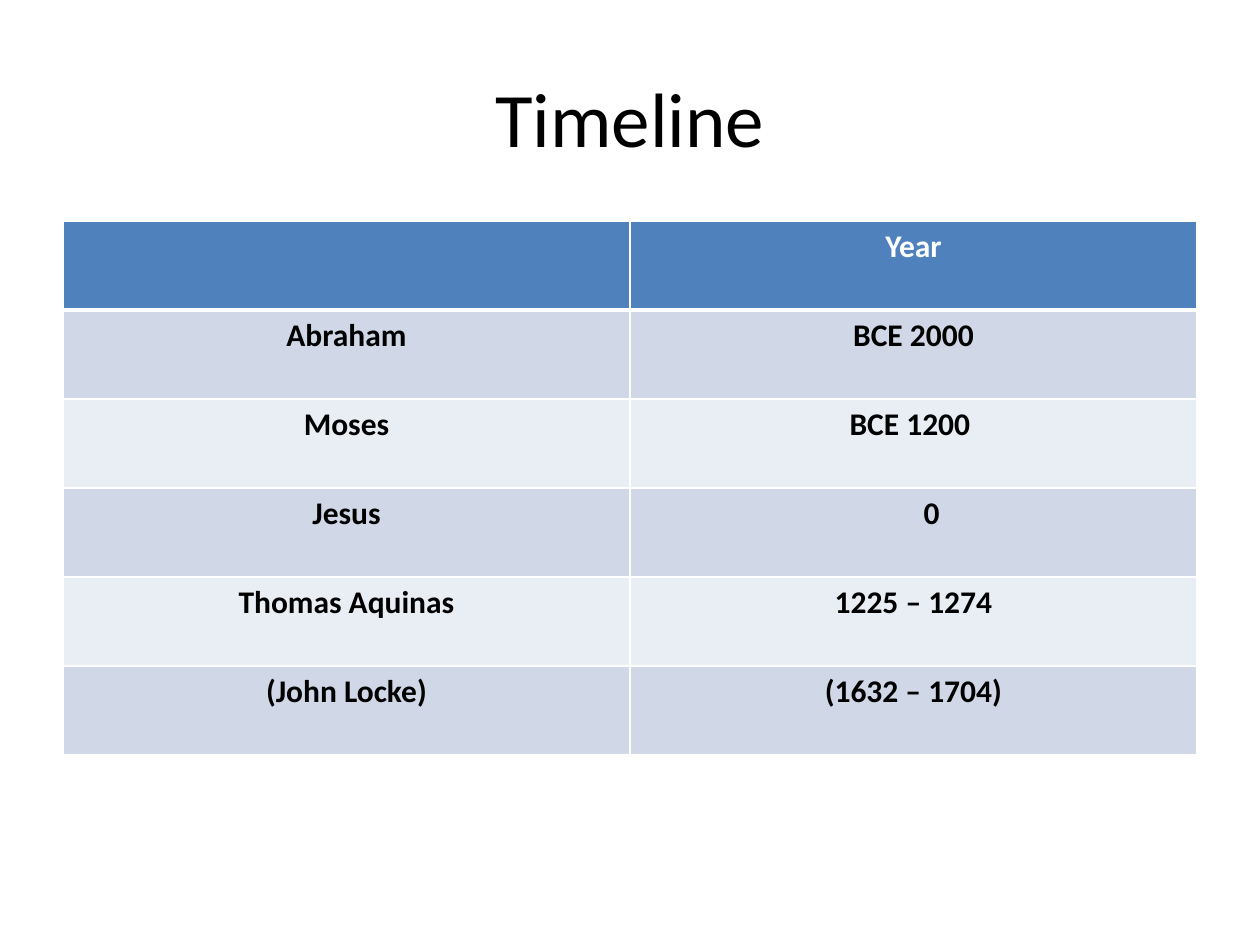
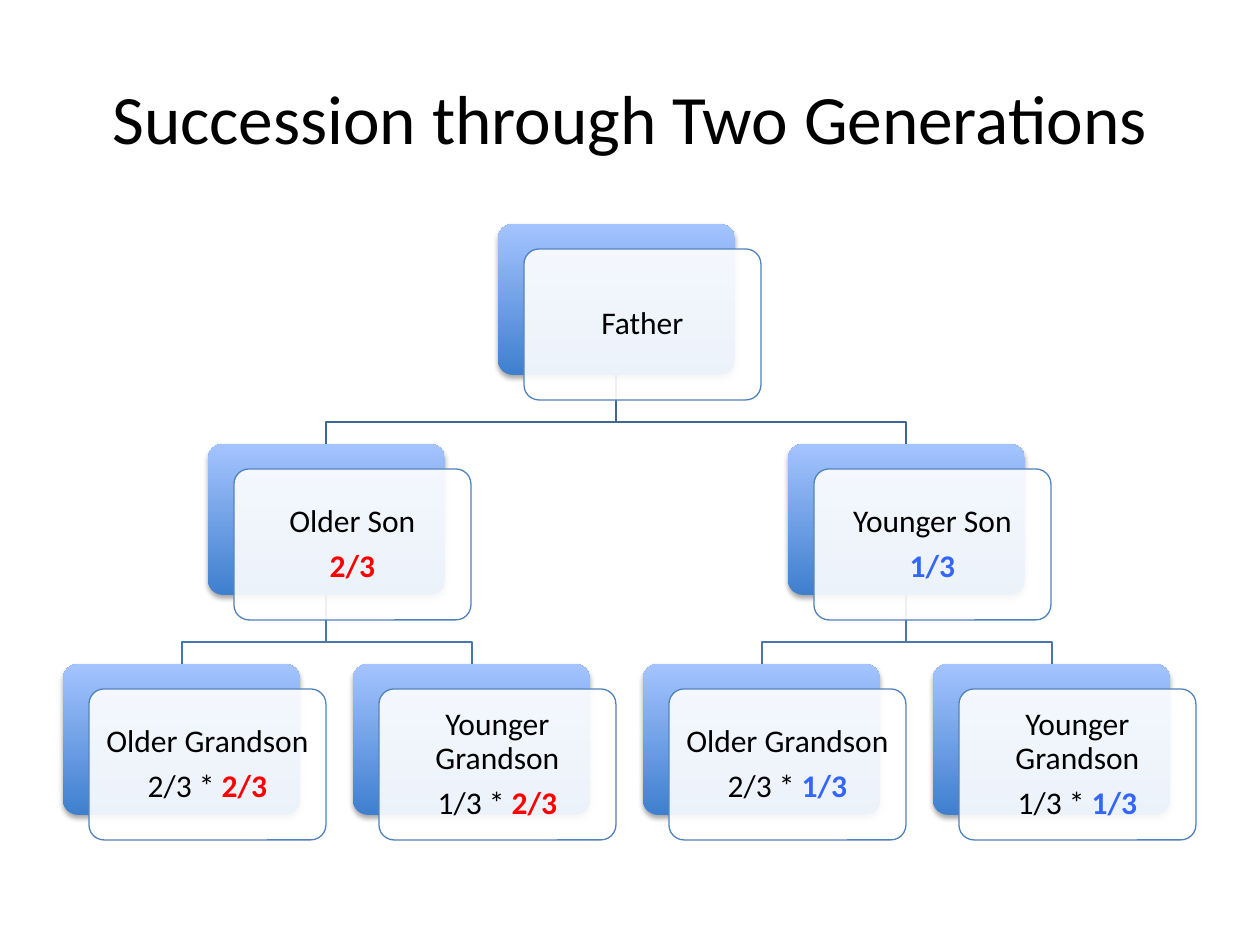
import pptx
import pptx.util
import pptx.dml.color
import pptx.enum.shapes
import pptx.enum.text
import pptx.oxml
import pptx.oxml.ns

PX = pptx.util.Inches(1) / 126
FONT = "Calibri"
COLORS = {
    "ink": "000000", "paper": "FFFFFF", "header": "4F81BD",
    "band_dark": "D0D8E8", "band_light": "E9EDF4",
    "older": "FF0000", "younger": "3366FF",
    "plate_low": "3F7FCE", "plate_high": "A4C4FF",
    "trunk": "3F6797", "branch": "4875AC", "outline": "4F81BD",
}

TIMELINE_TITLE = "Timeline"
TIMELINE = [
    ("", "Year"),
    ("Abraham", "BCE 2000"),
    ("Moses", "BCE 1200 "),
    ("Jesus", "0"),
    ("Thomas Aquinas", "1225 – 1274"),
    ("(John Locke)", "(1632 – 1704)"),
]
YEAR_ZERO_INDENT = 49

SUCCESSION_TITLE = "Succession through Two Generations"
# Each generation lists (name, plain factor, inherited share, share colour).
GENERATIONS = [
    [("Father", "", "", None)],
    [("Older Son", "", "2/3", "older"), ("Younger Son", "", "1/3", "younger")],
    [("Older Grandson", "2/3 * ", "2/3", "older"),
     ("Younger Grandson", "1/3 * ", "2/3", "older"),
     ("Older Grandson", "2/3 * ", "1/3", "younger"),
     ("Younger Grandson", "1/3 * ", "1/3", "younger")],
]

# Title and table share the left edge and width of the content column.
LEFT, WIDTH = 63, 1134
TITLE_TOP, TITLE_H = 38, 158
TABLE_TOP, ROW_H = 221, 89
TREE_TOP, LEVEL_PITCH, LEAF_PITCH = 224, 220, 290
PLATE_W, PLATE_H = 237, 151
CARD_DX, CARD_DY = 26, 25
BEND_RISE = 22
CARD_INSET = 9


def px(*lengths):
    return [pptx.util.Emu(round(length * PX)) for length in lengths]


def rgb(name):
    return pptx.dml.color.RGBColor.from_string(COLORS[name])


def xml(tag, inner="", attributes=""):
    return pptx.oxml.parse_xml(
        f'<a:{tag} {pptx.oxml.ns.nsdecls("a")} {attributes}>{inner}</a:{tag}>')


def color_xml(name, inner=""):
    return f'<a:srgbClr val="{COLORS[name]}">{inner}</a:srgbClr>'


def write(frame, paragraphs, size=18, color="ink", bold=False,
          line_spacing=None, space_after=None):
    """Fill a frame; a paragraph is a list of (text, accent colour or None)."""
    frame.word_wrap = True
    for index, runs in enumerate(paragraphs):
        paragraph = frame.paragraphs[0] if index == 0 else frame.add_paragraph()
        paragraph.alignment = pptx.enum.text.PP_ALIGN.CENTER
        paragraph.line_spacing = line_spacing
        if space_after is not None:
            paragraph.space_after = pptx.util.Pt(space_after)
        for text, accent in runs:
            run = paragraph.add_run()
            run.text = text
            run.font.name = FONT
            run.font.size = pptx.util.Pt(size)
            run.font.bold = bold or accent is not None
            run.font.color.rgb = rgb(accent or color)


def add_titled_slide(deck, title, size):
    slide = deck.slides.add_slide(deck.slide_layouts[6])
    heading = slide.shapes.add_textbox(*px(LEFT, TITLE_TOP, WIDTH, TITLE_H))
    heading.text_frame.vertical_anchor = pptx.enum.text.MSO_ANCHOR.MIDDLE
    write(heading.text_frame, [[(title, None)]], size=size)
    return slide


def set_borders(cell, **points):
    properties = cell._tc.get_or_add_tcPr()
    for side in "LRTB":
        width = pptx.util.Pt(points.get(side, 1))
        properties.append(xml(f"ln{side}", f"<a:solidFill>{color_xml('paper')}</a:solidFill>",
                              f'w="{width}"'))


def add_timeline(slide):
    rows, columns = len(TIMELINE), len(TIMELINE[0])
    table = slide.shapes.add_table(
        rows, columns, *px(LEFT, TABLE_TOP, WIDTH, rows * ROW_H)).table
    table.horz_banding = False
    for r, entry in enumerate(TIMELINE):
        for c, text in enumerate(entry):
            cell = table.cell(r, c)
            set_borders(cell, B=3 if r == 0 else 1, T=3 if r == 1 else 1)
            cell.fill.solid()
            band = "band_dark" if r % 2 else "band_light"
            cell.fill.fore_color.rgb = rgb(band if r else "header")
            if text:
                write(cell.text_frame, [[(text, None)]], bold=True,
                      color="ink" if r else "paper")
            if text == "0":
                cell.margin_left = px(YEAR_ZERO_INDENT)[0]


def plate_positions():
    """Left edges per generation: even leaves, parents centred over children."""
    levels = [[LEFT + i * LEAF_PITCH for i in range(len(GENERATIONS[-1]))]]
    while len(levels[0]) > 1:
        below = levels[0]
        levels.insert(0, [(a + b) / 2 for a, b in zip(below[::2], below[1::2])])
    return levels


def add_elbow(slide, parent_x, child_x, parent_top, color):
    start_x, end_x = parent_x + PLATE_W / 2, child_x + PLATE_W / 2
    end_y = parent_top + LEVEL_PITCH
    bend_y = end_y - BEND_RISE
    builder = slide.shapes.build_freeform(start_x, parent_top + PLATE_H, scale=PX)
    builder.add_line_segments(
        [(start_x, bend_y), (end_x, bend_y), (end_x, end_y)], close=False)
    elbow = builder.convert_to_shape()
    elbow.shadow.inherit = False
    elbow.fill.background()
    elbow.line.color.rgb = rgb(color)
    elbow.line.width = pptx.util.Pt(0.75)


def add_rounded(slide, left, top):
    shape = slide.shapes.add_shape(
        pptx.enum.shapes.MSO_SHAPE.ROUNDED_RECTANGLE, *px(left, top, PLATE_W, PLATE_H))
    shape.adjustments[0] = 0.1
    shape.shadow.inherit = False
    return shape


def add_person(slide, left, top, name, factor, share, accent):
    plate = add_rounded(slide, left, top)
    plate.line.fill.background()
    plate.fill.gradient()
    plate.fill.gradient_angle = 90
    for stop, color in zip(plate.fill.gradient_stops, ("plate_low", "plate_high")):
        stop.color.rgb = rgb(color)
    blur, distance = pptx.util.Pt(3.1), pptx.util.Pt(1.8)
    effects = plate._element.spPr.find(pptx.oxml.ns.qn("a:effectLst"))
    effects.append(xml("outerShdw", color_xml("ink", '<a:alpha val="35000"/>'),
                       f'blurRad="{blur}" dist="{distance}" dir="5400000" rotWithShape="0"'))

    card = add_rounded(slide, left + CARD_DX, top + CARD_DY)
    card.fill.solid()
    card.fill.fore_color.rgb = rgb("paper")
    card.fill._xPr.find(".//" + pptx.oxml.ns.qn("a:srgbClr")).append(
        xml("alpha", attributes='val="90000"'))
    card.line.color.rgb = rgb("outline")
    card.line.width = pptx.util.Pt(0.75)
    frame = card.text_frame
    frame.vertical_anchor = pptx.enum.text.MSO_ANCHOR.MIDDLE
    frame.margin_left, frame.margin_top, frame.margin_right, frame.margin_bottom = px(
        *[CARD_INSET] * 4)
    portion = [run for run in ((factor, None), (share, accent)) if run[0]]
    write(frame, [[(name, None)]] + ([portion] if portion else []),
          line_spacing=0.9, space_after=6.3)


def add_family_tree(slide):
    levels = plate_positions()
    tops = [TREE_TOP + i * LEVEL_PITCH for i in range(len(levels))]
    for parents, children, top, color in zip(levels, levels[1:], tops, ("trunk", "branch")):
        for i, child_x in enumerate(children):
            add_elbow(slide, parents[i // 2], child_x, top, color)
    for people, lefts, top in zip(GENERATIONS, levels, tops):
        for person, left in zip(people, lefts):
            add_person(slide, left, top, *person)


def main():
    deck = pptx.Presentation()
    deck.slide_width, deck.slide_height = px(1260, 945)
    add_timeline(add_titled_slide(deck, TIMELINE_TITLE, 44))
    add_family_tree(add_titled_slide(deck, SUCCESSION_TITLE, 39.6))
    deck.save("out.pptx")


if __name__ == "__main__":
    main()
